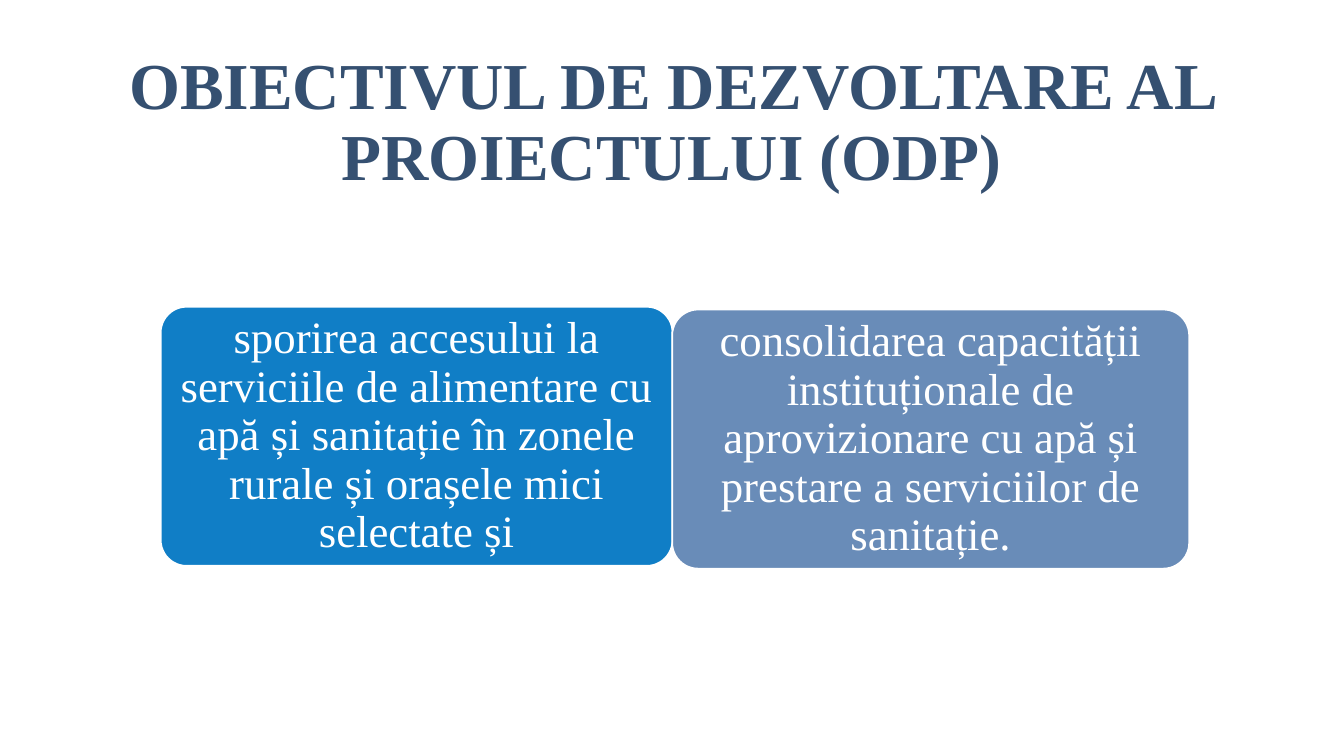
from pptx import Presentation
from pptx.dml.color import RGBColor
from pptx.enum.shapes import MSO_SHAPE
from pptx.enum.text import MSO_ANCHOR, PP_ALIGN
from pptx.util import Cm, Pt

NAVY = RGBColor(0x35, 0x50, 0x71)
BLACK = RGBColor(0, 0, 0)
WHITE = RGBColor(0xFF, 0xFF, 0xFF)
BLUE = RGBColor(0x10, 0x7E, 0xC6)
STEEL = RGBColor(0x69, 0x8C, 0xB8)
FONT = "Times New Roman"

deck = Presentation()
deck.slide_width = Cm(33.87)
deck.slide_height = Cm(19.05)
slide = deck.slides.add_slide(deck.slide_layouts[6])


def center(frame):
    frame.word_wrap = True
    frame.vertical_anchor = MSO_ANCHOR.MIDDLE
    para = frame.paragraphs[0]
    para.alignment = PP_ALIGN.CENTER
    para.line_spacing = 0.9
    para.font.name = FONT
    return para


title = slide.shapes.add_textbox(Cm(2.33), Cm(1.55), Cm(29.21), Cm(3.15))
para = center(title.text_frame)
para.font.bold = True
for text, size, color in [
    ("OBIECTIVUL", 46.8, NAVY),
    (" ", 36, BLACK),
    ("DE DEZVOLTARE AL PROIECTULUI (ODP)", 46.8, NAVY),
]:
    run = para.add_run()
    run.text = text
    run.font.size = Pt(size)
    run.font.color.rgb = color

goals = [
    (4.05, 7.73, 12.9, BLUE,
     "sporirea accesului la serviciile de alimentare cu apă și sanitație "
     "în zonele rurale și orașele mici selectate și"),
    (16.94, 7.8, 13.03, STEEL,
     "consolidarea capacității instituționale de aprovizionare cu apă "
     "și prestare a serviciilor de sanitație."),
]
for left, top, width, color, text in goals:
    card = slide.shapes.add_shape(
        MSO_SHAPE.ROUNDED_RECTANGLE, Cm(left), Cm(top), Cm(width), Cm(6.53))
    card.adjustments[0] = 0.1
    card.shadow.inherit = False
    card.fill.solid()
    card.fill.fore_color.rgb = color
    card.line.color.rgb = WHITE
    card.line.width = Pt(1.25)
    frame = card.text_frame
    frame.margin_left = frame.margin_right = Cm(0.18)
    frame.margin_top = frame.margin_bottom = Cm(0.1)
    para = center(frame)
    para.text = text
    para.font.size = Pt(32)
    para.font.color.rgb = WHITE

deck.save("out.pptx")
